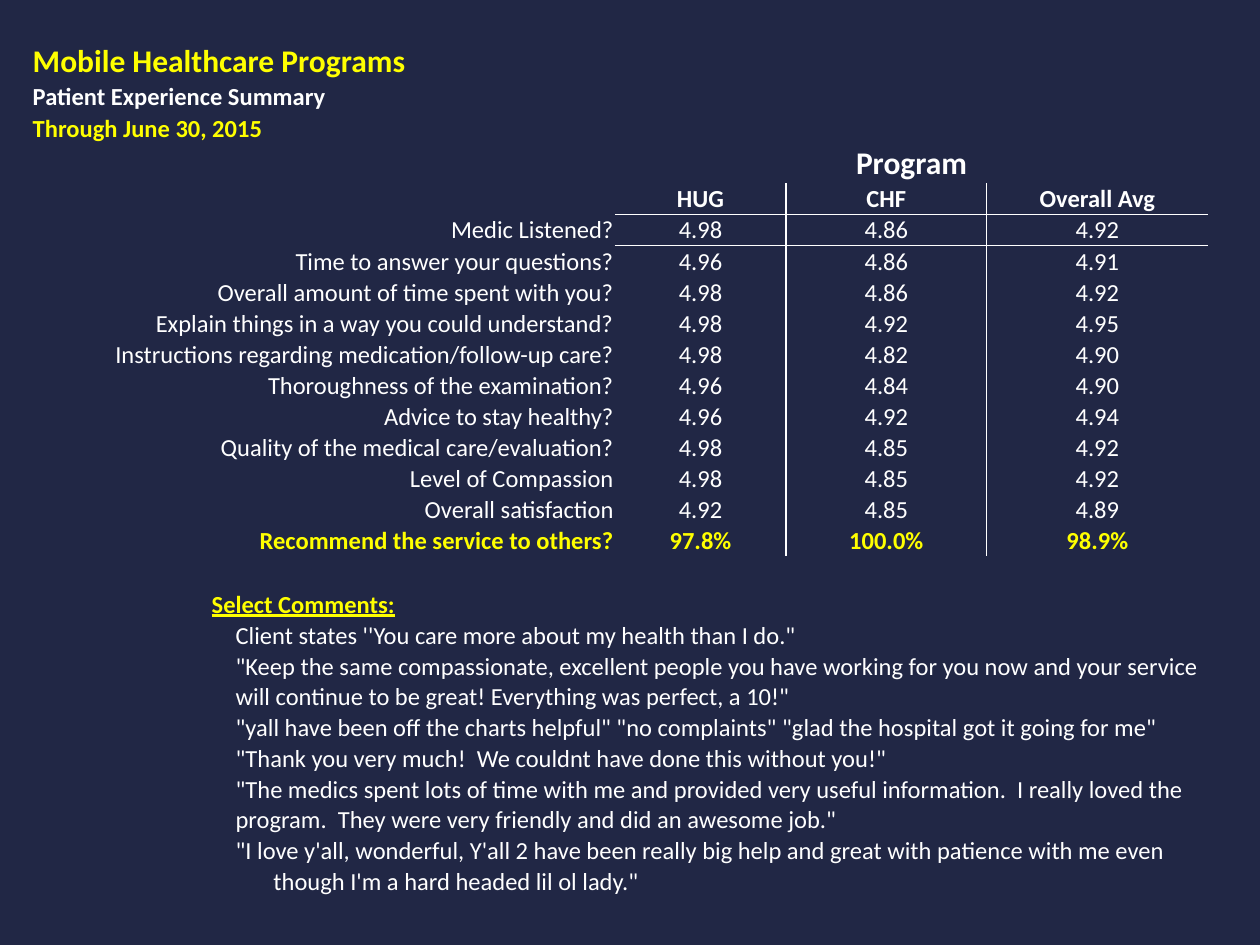
from lxml.etree import SubElement as Sub
from pptx import Presentation
from pptx.dml.color import RGBColor as Color
from pptx.enum.text import MSO_ANCHOR as Anchor, PP_ALIGN as Align
from pptx.oxml.ns import qn
from pptx.util import Inches, Pt

HUES = {"back": "212745", "text": "FFFFFF", "mark": "FFFF00", "rule": "FFFFFF"}
FACE = "Calibri"
BARE = "{2D5ABB26-0587-4C30-8999-92F81FD0307C}"  # style without grid or fill
THIN, TALL = 0.2, 0.25
HEAD = 4  # row of the program names

TITLES = [
    ("Mobile Healthcare Programs", 18, "mark"),
    ("Patient Experience Summary", 14, "text"),
    ("Through June 30, 2015", 14, "mark"),
]
SCORES = [
    ("", "HUG", "CHF", "Overall Avg"),
    ("Medic Listened?", "4.98", "4.86", "4.92"),
    ("Time to answer your questions?", "4.96", "4.86", "4.91"),
    ("Overall amount of time spent with you?", "4.98", "4.86", "4.92"),
    ("Explain things in a way you could understand?", "4.98", "4.92", "4.95"),
    ("Instructions regarding medication/follow-up care?", "4.98", "4.82", "4.90"),
    ("Thoroughness of the examination?", "4.96", "4.84", "4.90"),
    ("Advice to stay healthy?", "4.96", "4.92", "4.94"),
    ("Quality of the medical care/evaluation?", "4.98", "4.85", "4.92"),
    ("Level of Compassion", "4.98", "4.85", "4.92"),
    ("Overall satisfaction", "4.92", "4.85", "4.89"),
    ("Recommend the service to others?", "97.8%", "100.0%", "98.9%"),
]
# Text, columns spanned, left indent, anchor
QUOTES = [
    ("Client states ''You care more about my health than I do.\"", 2, 0.2, Anchor.TOP),
    ('"Keep the same compassionate, excellent people you have working for you now '
     'and your service will continue to be great! Everything was perfect, a 10!"',
     5, 0.2, Anchor.TOP),
    ('"yall have been off the charts helpful" "no complaints" '
     '"glad the hospital got it going for me"', 5, 0.2, Anchor.TOP),
    ('"Thank you very much!  We couldnt have done this without you!"',
     3, 0.2, Anchor.TOP),
    ('"The medics spent lots of time with me and provided very useful information.  '
     'I really loved the program.  They were very friendly and did an awesome job."',
     5, 0.2, Anchor.TOP),
    ('"I love y\'all, wonderful, Y\'all 2 have been really big help and great '
     'with patience with me even', 5, 0.2, Anchor.BOTTOM),
    ("though I'm a hard headed lil ol lady.\"", 1, 0.5, Anchor.BOTTOM),
]


def add_grid(slide, left, top, cols, rows, height):
    """Add a table without style whose empty cells stay as low as one text line."""
    frame = slide.shapes.add_table(
        len(rows), len(cols), Inches(left), Inches(top),
        Inches(sum(cols)), Inches(height))
    grid = frame.table
    grid.first_row = grid.horz_banding = False
    grid._tbl.tblPr.find(qn("a:tableStyleId")).text = BARE
    for col, width in zip(grid.columns, cols):
        col.width = Inches(width)
    for row, size in zip(grid.rows, rows):
        row.height = Inches(size)
    frame.height = Inches(height)
    for cell in grid.iter_cells():
        cell.margin_left = cell.margin_right = cell.margin_top = Inches(0.01)
        cell.margin_bottom = 0
        cell.vertical_anchor = Anchor.BOTTOM
        cell.fill.background()
        end = cell.text_frame.paragraphs[0]._p.get_or_add_endParaRPr()
        end.set("sz", "1400")
    return grid


def write(cell, text, hue="text", size=14, bold=False, line=False, align=Align.LEFT):
    para = cell.text_frame.paragraphs[0]
    para.text = text
    para.alignment = align
    for run in para.runs:
        font = run.font
        font.name, font.size = FACE, Pt(size)
        font.bold, font.underline = bold, line
        font.color.rgb = Color.from_string(HUES[hue])


def rule(cell, sides):
    """Draw borders on the given sides, a string in the order LRTB."""
    props = cell._tc.get_or_add_tcPr()
    for spot, side in enumerate(sides):
        edge = Sub(props, qn(f"a:ln{side}"), w=str(Pt(1)))
        fill = Sub(edge, qn("a:solidFill"))
        Sub(fill, qn("a:srgbClr"), val=HUES["rule"])
        props.insert(spot, edge)


def add_scores(slide):
    rows = [TALL, THIN, THIN, TALL] + [THIN] * len(SCORES)
    grid = add_grid(slide, 0.25, 0.33, [4.63, 1.36, 1.59, 1.76], rows, 4)
    for num, (text, size, hue) in enumerate(TITLES):
        write(grid.cell(num, 0), text, hue, size, bold=True)
    first = grid.cell(HEAD - 1, 1)
    first.merge(grid.cell(HEAD - 1, 3))
    write(first, "Program", size=18, bold=True, align=Align.CENTER)
    last = HEAD + len(SCORES) - 1
    for num, row in enumerate(SCORES, HEAD):
        hue = "mark" if num == last else "text"
        for col, text in enumerate(row):
            cell = grid.cell(num, col)
            if text:
                write(cell, text, hue, bold=num in (HEAD, last),
                      align=Align.CENTER if col else Align.RIGHT)
            if col:
                rule(cell, "L" * (col > 1) + "R" * (col < 3)
                     + "T" * (num == HEAD + 1) + "B" * (num == HEAD))


def add_quotes(slide):
    rows = [THIN] * (len(QUOTES) + 1)
    grid = add_grid(slide, 1.67, 4.67, [4, 0.91, 0.94, 1.01, 1.05], rows, 2.4)
    write(grid.cell(0, 0), "Select Comments:", "mark", bold=True, line=True)
    for num, (text, span, inset, anchor) in enumerate(QUOTES, 1):
        cell = grid.cell(num, 0)
        if span > 1:
            cell.merge(grid.cell(num, span - 1))
        cell.margin_left = Inches(inset)
        cell.vertical_anchor = anchor
        write(cell, text)


def main():
    deck = Presentation()
    deck.slide_width, deck.slide_height = Inches(10), Inches(7.5)
    slide = deck.slides.add_slide(deck.slide_layouts[6])
    back = slide.background.fill
    back.solid()
    back.fore_color.rgb = Color.from_string(HUES["back"])
    add_quotes(slide)
    add_scores(slide)
    deck.save("out.pptx")


if __name__ == "__main__":
    main()
